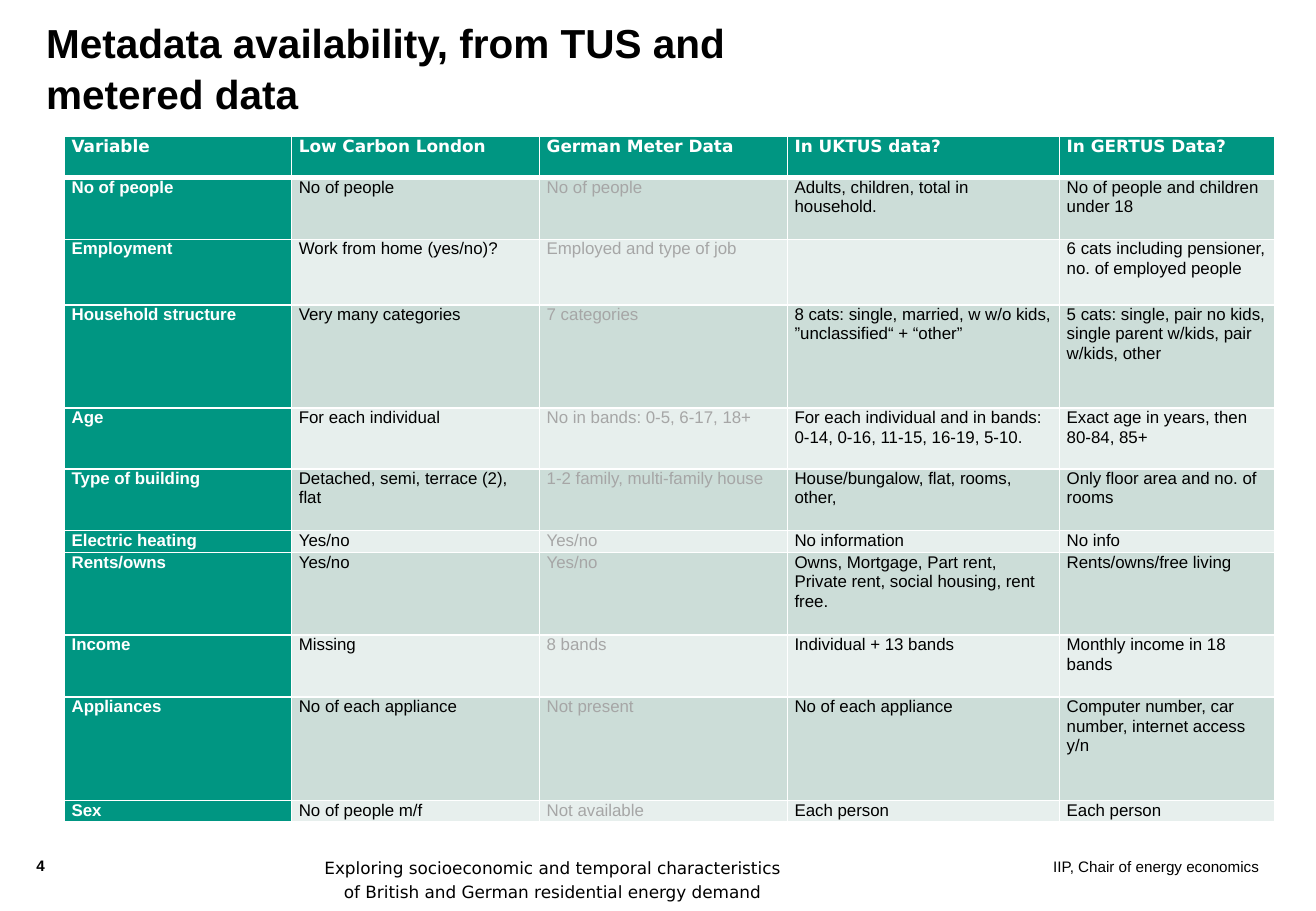
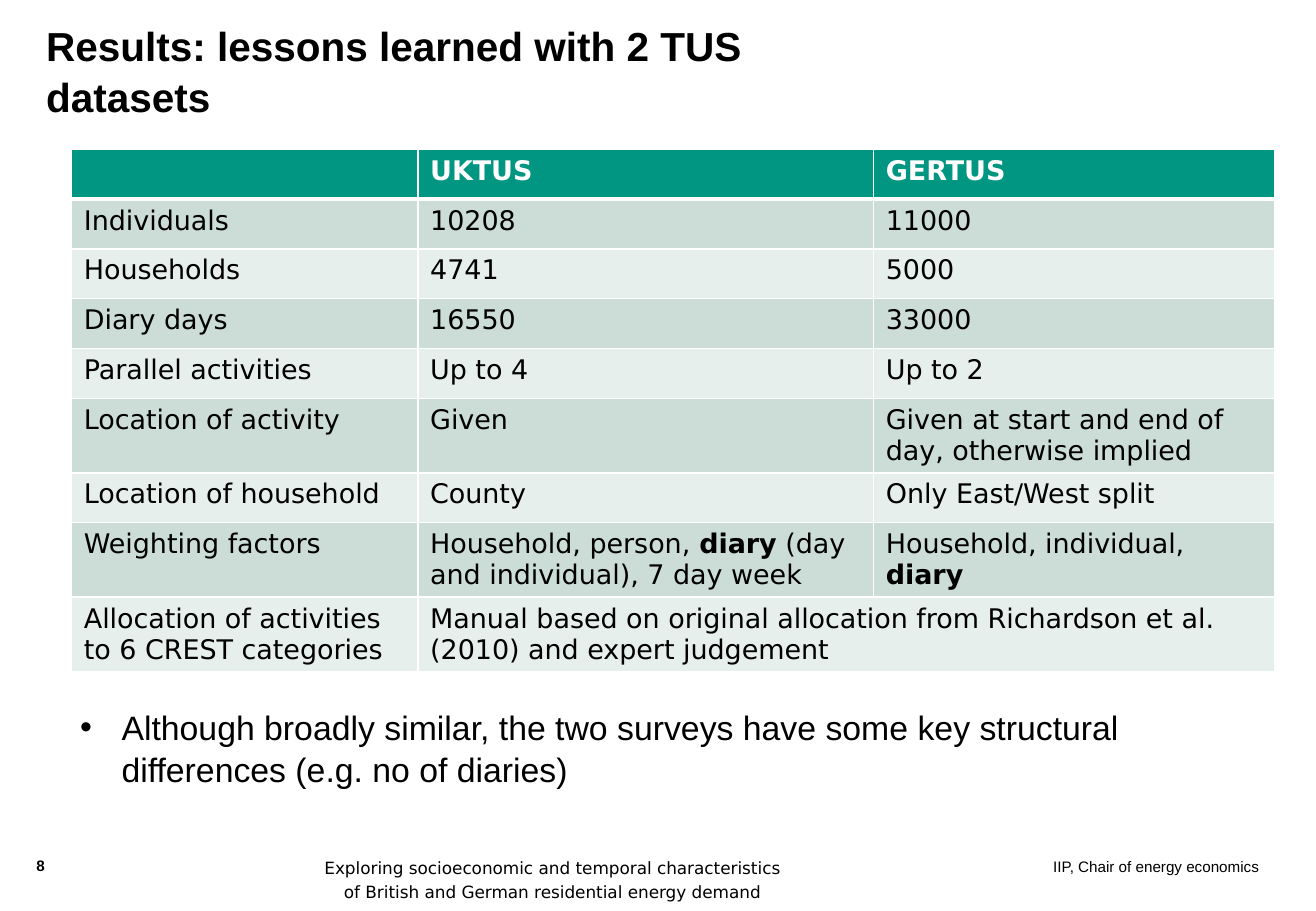
import collections

import lxml.etree
import pptx
import pptx.dml.color
import pptx.enum.text
import pptx.oxml.ns
import pptx.util

Inches = pptx.util.Inches
Box = collections.namedtuple("Box", "left top width height")
TableStyle = collections.namedtuple("TableStyle", "font size side_inset top_inset spacing side_header muted_column")

COLOURS = {"green": "009682", "band": "CCDDD8", "pale": "E7EFED",
           "white": "FFFFFF", "black": "000000", "grey": "A6A6A6"}
SANS = "Arial"
WIDE = "DejaVu Sans"
ALIGN = pptx.enum.text.PP_ALIGN
ANCHOR = pptx.enum.text.MSO_ANCHOR
TITLE_ONLY, TITLE_AND_BODY = 5, 1

METADATA_STYLE = TableStyle(SANS, 10, 0.06, 0, 1.03, True, 2)
METADATA_COLUMNS = [1.87, 2.04, 2.04, 2.24, 1.77]
METADATA_HEIGHTS = [0.34, 0.51, 0.54, 0.85, 0.5, 0.51, 0.18, 0.68, 0.51, 0.85, 0.18]
METADATA_ROWS = [
    ["Variable", "Low Carbon London", "German Meter Data", "In UKTUS data?", "In GERTUS Data?"],
    ["No of people", "No of people", "No of people", "Adults, children, total in household.",
     "No of people and children under 18"],
    ["Employment", "Work from home (yes/no)?", "Employed and type of job", "",
     "6 cats including pensioner, no. of employed people"],
    ["Household structure", "Very many categories", "7 categories",
     "8 cats: single, married, w w/o kids, ”unclassified“ + “other”",
     "5 cats: single, pair no kids, single parent w/kids, pair w/kids, other"],
    ["Age", "For each individual", "No in bands: 0-5, 6-17, 18+",
     "For each individual and in bands: 0-14, 0-16, 11-15, 16-19, 5-10.",
     "Exact age in years, then 80-84, 85+"],
    ["Type of building", "Detached, semi, terrace (2), flat", "1-2 family, multi-family house",
     "House/bungalow, flat, rooms, other,", "Only floor area and no. of rooms"],
    ["Electric heating", "Yes/no", "Yes/no", "No information", "No info"],
    ["Rents/owns", "Yes/no", "Yes/no",
     "Owns, Mortgage, Part rent, Private rent, social housing, rent free.", "Rents/owns/free living"],
    ["Income", "Missing", "8 bands", "Individual + 13 bands", "Monthly income in 18 bands"],
    ["Appliances", "No of each appliance", "Not present", "No of each appliance",
     "Computer number, car number, internet access y/n"],
    ["Sex", "No of people m/f", "Not available", "Each person", "Each person"],
]

SURVEY_STYLE = TableStyle(WIDE, 16, 0.1, 0.05, 1, False, None)
SURVEY_COLUMNS = [2.85, 3.75, 3.3]
SURVEY_ROWS = [
    ["", "UKTUS", "GERTUS"],
    ["Individuals", "10208", "11000"],
    ["Households", "4741", "5000"],
    ["Diary days", "16550", "33000"],
    ["Parallel activities", "Up to 4", "Up to 2"],
    ["Location of activity", "Given", "Given at start and end of day, otherwise implied"],
    ["Location of household", "County", "Only East/West split"],
    ["Weighting factors", "Household, person, **diary** (day and individual), 7 day week",
     "Household, individual, **diary**"],
    ["Allocation of activities to 6 CREST categories",
     "Manual based on original allocation from Richardson et al. (2010) and expert judgement", ""],
]


def colour(name):
    """Return the named colour."""
    return pptx.dml.color.RGBColor.from_string(COLOURS[name])


def inches(box):
    """Return the four lengths of a box."""
    return [Inches(length) for length in box]


def write(frame, text, font, size, ink="black", bold=False, align=ALIGN.LEFT, spacing=1):
    """Fill a frame with one paragraph in which **marked** words are bold."""
    para = frame.paragraphs[0]
    para.alignment = align
    para.line_spacing = spacing
    para.space_before = pptx.util.Pt(0)
    for index, part in enumerate(text.split("**")):
        if part:
            span = para.add_run()
            span.text = part
            span.font.name = font
            span.font.size = pptx.util.Pt(size)
            span.font.bold = bold or index % 2 == 1
            span.font.color.rgb = colour(ink)


def set_frame(frame, side=0, top=0, anchor=ANCHOR.TOP):
    """Set the insets, wrapping and anchor of a frame."""
    frame.word_wrap = True
    frame.auto_size = pptx.enum.text.MSO_AUTO_SIZE.NONE
    frame.margin_left = frame.margin_right = Inches(side)
    frame.margin_top = frame.margin_bottom = Inches(top)
    frame.vertical_anchor = anchor


def add_label(page, box, text, side=0, top=0, **style):
    """Add a text box with one paragraph."""
    frame = page.shapes.add_textbox(*inches(box)).text_frame
    set_frame(frame, side, top)
    write(frame, text, **style)


def fill_placeholder(holder, box, text, size, bold=False, anchor=ANCHOR.TOP):
    """Move a placeholder and write its text."""
    holder.left, holder.top, holder.width, holder.height = inches(box)
    set_frame(holder.text_frame, anchor=anchor)
    write(holder.text_frame, text, SANS, size, bold=bold, spacing=1.05)


def add_footer(page, box, number):
    """Add the page number, talk title and chair along the foot."""
    add_label(page, Box(box.left, box.top + 0.07, 0.39, 0.24), number, font=SANS, size=9, bold=True)
    add_label(page, Box(box.left + 2.2, box.top, 4.09, box.height),
              "Exploring socioeconomic and temporal characteristics of British and German residential energy demand",
              0.1, 0.05, font=WIDE, size=10, align=ALIGN.CENTER, spacing=1.2)
    add_label(page, Box(box.left + box.width - 3.24, box.top + 0.08, 3.24, 0.39),
              "IIP, Chair of energy economics", font=SANS, size=9, align=ALIGN.RIGHT)


def set_borders(cell, row):
    """Draw white cell borders, with a thick rule under the header."""
    properties = cell._tc.get_or_add_tcPr()
    widths = {"lnL": 1, "lnR": 1, "lnT": 3 if row == 1 else 1, "lnB": 3 if row == 0 else 1}
    for side, width in widths.items():
        line = lxml.etree.SubElement(properties, pptx.oxml.ns.qn("a:" + side), w=str(pptx.util.Pt(width)))
        fill = lxml.etree.SubElement(line, pptx.oxml.ns.qn("a:solidFill"))
        lxml.etree.SubElement(fill, pptx.oxml.ns.qn("a:srgbClr"), val=COLOURS["white"])


def format_cell(cell, row, column, text, style):
    """Fill one cell according to its place in the table."""
    header = row == 0 or (style.side_header and column == 0)
    set_borders(cell, row)
    cell.fill.solid()
    cell.fill.fore_color.rgb = colour("green" if header else "band" if row % 2 else "pale")
    cell.margin_left = cell.margin_right = Inches(style.side_inset)
    cell.margin_top = cell.margin_bottom = Inches(style.top_inset)
    ink = "white" if header else "grey" if column == style.muted_column else "black"
    write(cell.text_frame, text, WIDE if row == 0 else style.font, style.size, ink, header,
          spacing=style.spacing)


def add_banded_table(page, box, rows, widths, heights, style):
    """Add a table with a green header and banded rows."""
    table = page.shapes.add_table(len(rows), len(widths), *inches(box)).table
    table.horz_banding = False
    for column, width in zip(table.columns, widths):
        column.width = Inches(width)
    for index, (texts, height) in enumerate(zip(rows, heights)):
        table.rows[index].height = Inches(height)
        for column, text in enumerate(texts):
            format_cell(table.cell(index, column), index, column, text, style)
    return table


def start_page(deck, layout, title, title_box, number):
    """Add a slide with its title and footer."""
    page = deck.slides.add_slide(deck.slide_layouts[layout])
    fill_placeholder(page.shapes.title, title_box, title, 24, True, ANCHOR.BOTTOM)
    add_footer(page, Box(0.3, 6.98, 10.06, 0.5), number)
    return page


def add_metadata_page(deck):
    """Build the slide on metadata availability."""
    page = start_page(deck, TITLE_ONLY, "Metadata availability, from TUS and metered data",
                      Box(0.38, 0.36, 6.77, 0.61), "4")
    add_banded_table(page, Box(0.53, 1.12, 9.95, 5.64), METADATA_ROWS,
                     METADATA_COLUMNS, METADATA_HEIGHTS, METADATA_STYLE)


def add_lessons_page(deck):
    """Build the slide that compares the two surveys."""
    page = start_page(deck, TITLE_AND_BODY, "Results: lessons learned with 2 TUS datasets",
                      Box(0.38, 0.38, 6.61, 0.61), "8")
    table = add_banded_table(page, Box(0.59, 1.23, 9.9, 4.33), SURVEY_ROWS,
                             SURVEY_COLUMNS, [0.41] * len(SURVEY_ROWS), SURVEY_STYLE)
    last = len(SURVEY_ROWS) - 1
    table.cell(last, 1).merge(table.cell(last, 2))

    body = page.placeholders[1]
    properties = body.text_frame.paragraphs[0]._p.get_or_add_pPr()
    properties.set("marL", str(Inches(0.34)))
    properties.set("indent", str(Inches(-0.34)))
    lxml.etree.SubElement(properties, pptx.oxml.ns.qn("a:buChar"), char="•")
    fill_placeholder(body, Box(0.66, 5.8, 9.9, 1.07),
                     "Although broadly similar, the two surveys have some key structural "
                     "differences (e.g. no of diaries)", 20)


def main():
    """Build and save the deck."""
    deck = pptx.Presentation()
    deck.slide_width, deck.slide_height = Inches(10.83), Inches(7.5)
    add_metadata_page(deck)
    add_lessons_page(deck)
    deck.save("out.pptx")


if __name__ == "__main__":
    main()
